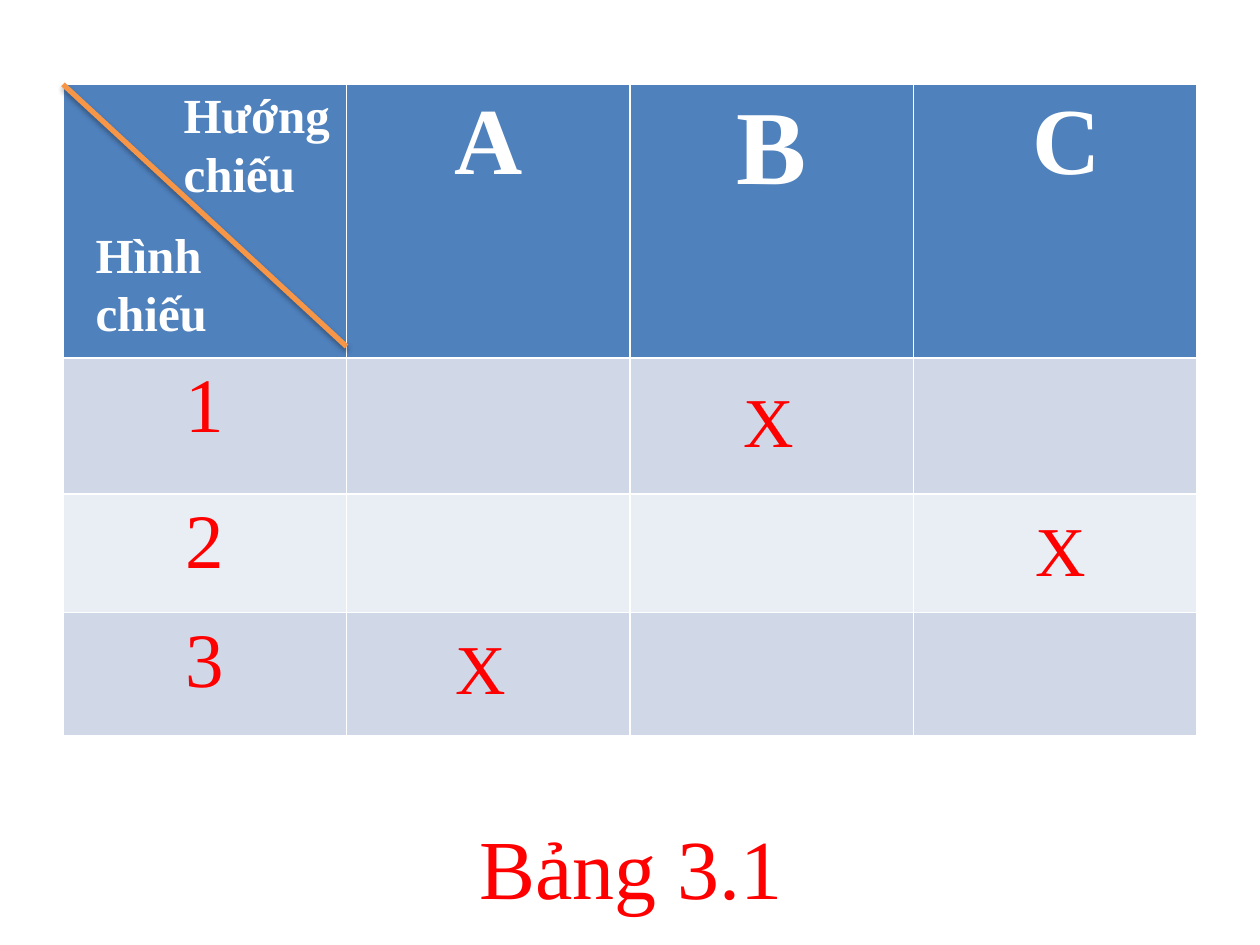
from lxml import etree
from pptx import Presentation
from pptx import util as u
from pptx.dml.color import RGBColor
from pptx.enum import shapes, text
from pptx.oxml import ns

PX = 9144  # EMU per px, at 100 px to the inch
FONT = "Times New Roman"
WHITE = RGBColor(0xFF, 0xFF, 0xFF)
RED = RGBColor(0xFF, 0x00, 0x00)
ORANGE = RGBColor(0xF7, 0x96, 0x46)
HEADER_BLUE = RGBColor(0x4F, 0x81, 0xBD)
BAND_DARK = RGBColor(0xD0, 0xD8, 0xE8)
BAND_LIGHT = RGBColor(0xE9, 0xED, 0xF4)


def write(frame, words, size, color, bold=False, align=text.PP_ALIGN.CENTER):
    frame.text = words
    para = frame.paragraphs[0]
    para.alignment = align
    for span in para.runs:
        span.font.name = FONT
        span.font.size = u.Pt(size)
        span.font.bold = bold
        span.font.color.rgb = color


deck = Presentation()
deck.slide_width, deck.slide_height = 1000 * PX, 750 * PX
page = deck.slides.add_slide(deck.slide_layouts[6])

# Table: the default style supplies the white cell borders
ROW_HEIGHTS = [217, 108, 94, 98]
ROW_FILLS = [HEADER_BLUE, BAND_DARK, BAND_LIGHT, BAND_DARK]
table = page.shapes.add_table(
    4, 4, 50 * PX, 67 * PX, 900 * PX, sum(ROW_HEIGHTS) * PX).table
for row, height, fill in zip(table.rows, ROW_HEIGHTS, ROW_FILLS):
    row.height = height * PX
    for cell in row.cells:
        cell.fill.solid()
        cell.fill.fore_color.rgb = fill

# Column heads and row numbers
for column, (head, size) in enumerate([("A", 54), ("B", 60), (" C", 54)], 1):
    write(table.cell(0, column).text_frame, head, size, WHITE, bold=True)
for number in range(1, 4):
    write(table.cell(number, 0).text_frame, str(number), 44, RED)

# Diagonal that splits the corner cell, with a soft shadow below it
diagonal = page.shapes.add_connector(
    shapes.MSO_CONNECTOR.STRAIGHT, 50 * PX, 67 * PX, 275 * PX, 275 * PX)
diagonal.line.color.rgb = ORANGE
diagonal.line.width = u.Pt(3)
effects = etree.SubElement(diagonal._element.spPr, ns.qn("a:effectLst"))
shadow = etree.SubElement(effects, ns.qn("a:outerShdw"), blurRad="40000",
                          dist="23000", dir="5400000", rotWithShape="0")
shade = etree.SubElement(shadow, ns.qn("a:srgbClr"), val="000000")
etree.SubElement(shade, ns.qn("a:alpha"), val="35000")

# Corner labels, answer marks and caption
LEFT, CENTER = text.PP_ALIGN.LEFT, text.PP_ALIGN.CENTER
LABELS = [
    ("Hướng chiếu", (136, 62, 183, 104), 28, WHITE, True, LEFT),
    ("Hình chiếu", (66, 173, 118, 104), 28, WHITE, True, LEFT),
    ("X", (352, 491, 114, 77), 40, RED, False, LEFT),
    ("X", (580, 295, 125, 77), 40, RED, False, LEFT),
    ("X", (812, 397, 117, 77), 40, RED, False, LEFT),
    ("Bảng 3.1", (227, 642, 548, 91), 48, RED, False, CENTER),
]
for words, place, size, color, bold, align in LABELS:
    box = page.shapes.add_textbox(*(length * PX for length in place))
    box.text_frame.word_wrap = True
    box.text_frame.auto_size = text.MSO_AUTO_SIZE.SHAPE_TO_FIT_TEXT
    write(box.text_frame, words, size, color, bold, align)

deck.save("out.pptx")
